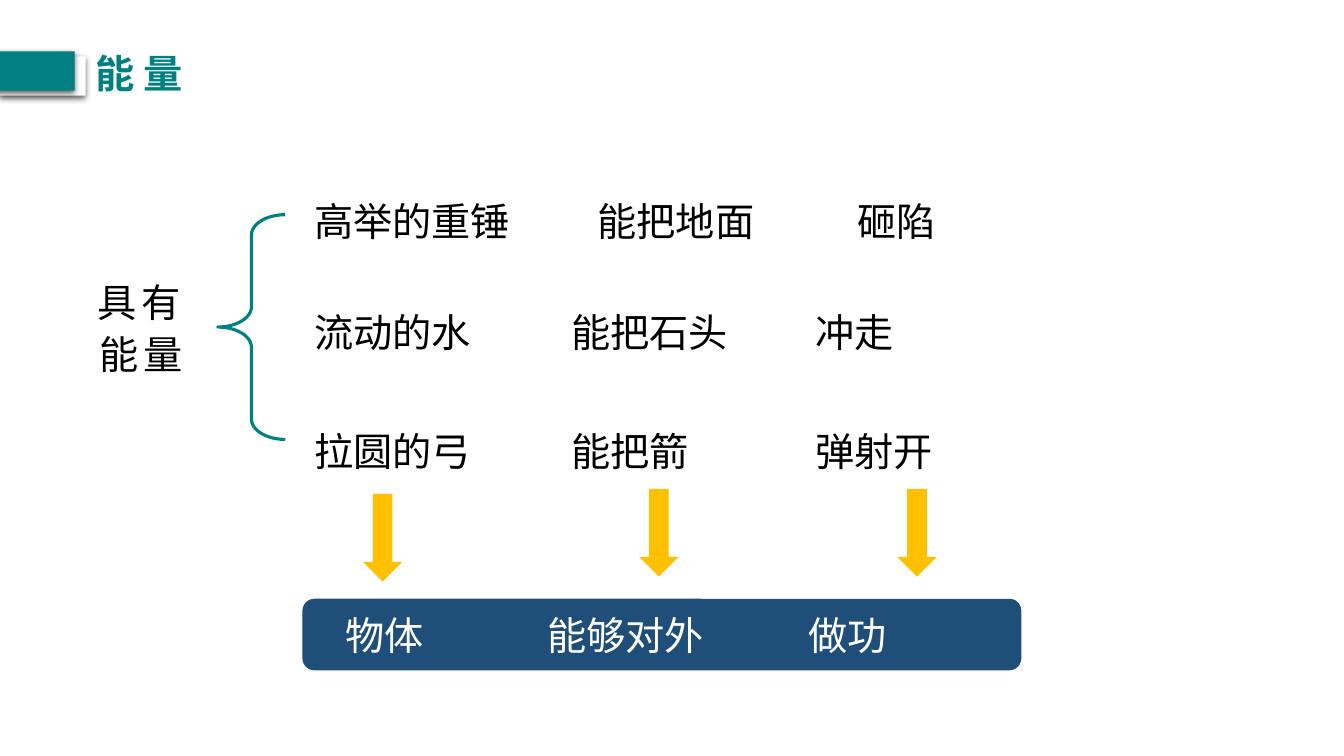
from lxml import etree
from pptx import Presentation
from pptx.dml.color import RGBColor
from pptx.enum.shapes import MSO_SHAPE
from pptx.enum.text import MSO_ANCHOR, MSO_AUTO_SIZE, PP_ALIGN
from pptx.oxml.ns import qn
from pptx.util import Inches, Pt

RECTANGLE = MSO_SHAPE.RECTANGLE
ROUNDED = MSO_SHAPE.ROUNDED_RECTANGLE
BRACE = MSO_SHAPE.RIGHT_BRACE
DOWN_ARROW = MSO_SHAPE.DOWN_ARROW
TOP = MSO_ANCHOR.TOP
NO_AUTOFIT = MSO_AUTO_SIZE.NONE
LEFT, CENTER = PP_ALIGN.LEFT, PP_ALIGN.CENTER

FONT = "Noto Sans CJK SC"
TEAL, NAVY, AMBER = "008080", "1F4E79", "FFC000"
BLACK, WHITE = "000000", "FFFFFF"

# Left, top, width, text parts and tab positions of each example
EXAMPLES = [
    (1.91, 9.97, ["高举的重锤", "能把地面", "砸陷"], [2.81, 5.39]),
    (3.01, 9.34, ["流动的水", "能把石头", "冲走"], [2.55, 4.97]),
    (4.19, 9.5, ["拉圆的弓", "能把箭", "弹射开"], [2.55, 4.97]),
]
ARROWS = [(3.6, 4.9), (6.34, 4.85), (8.9, 4.85)]


def color(hex_value):
    return RGBColor.from_string(hex_value)


def place(shape, left, top, width, height):
    shape.left, shape.top = Inches(left), Inches(top)
    shape.width, shape.height = Inches(width), Inches(height)


def add_tabs(paragraph, positions):
    tab_list = etree.SubElement(paragraph._p.get_or_add_pPr(), qn("a:tabLst"))
    for position in positions:
        etree.SubElement(tab_list, qn("a:tab"), pos=str(Inches(position)), algn="l")


def write(shape, text, text_color, align=LEFT, bold=False, tabs=()):
    frame = shape.text_frame
    frame.word_wrap = True
    frame.auto_size = NO_AUTOFIT
    frame.vertical_anchor = TOP
    paragraph = frame.paragraphs[0]
    paragraph.alignment = align
    if tabs:
        add_tabs(paragraph, tabs)
    run = paragraph.add_run()
    run.text = text
    run.font.size = Pt(28)
    run.font.bold = bold
    run.font.name = FONT
    run.font.color.rgb = color(text_color)
    etree.SubElement(run._r.get_or_add_rPr(), qn("a:ea"), typeface=FONT)
    return paragraph


def add_text(slide, box, text, text_color, **options):
    shape = slide.shapes.add_textbox(*map(Inches, box))
    return write(shape, text, text_color, **options)


def add_block(slide, kind, box, fill):
    shape = slide.shapes.add_shape(kind, *map(Inches, box))
    shape.shadow.inherit = False
    shape.fill.solid()
    shape.fill.fore_color.rgb = color(fill)
    shape.line.fill.background()
    return shape


def add_shadow(shape):
    effects = shape._element.spPr.find(qn("a:effectLst"))
    shadow = etree.SubElement(effects, qn("a:outerShdw"), blurRad=str(Pt(4.5)),
                              dist=str(Pt(1.5)), dir="5400000", algn="t",
                              rotWithShape="0")
    shade = etree.SubElement(shadow, qn("a:srgbClr"), val=BLACK)
    etree.SubElement(shade, qn("a:alpha"), val="63000")


def add_brace(slide, box):
    brace = slide.shapes.add_shape(BRACE, *map(Inches, box))
    brace.shadow.inherit = False
    brace.adjustments[0] = 0.3
    brace.adjustments[1] = 0.5
    brace.fill.background()
    brace.line.color.rgb = color(TEAL)
    brace.line.width = Pt(2.25)
    brace._element.spPr.find(qn("a:xfrm")).set("flipH", "1")


def add_heading(slide):
    for box, fill in [((0, 0.56, 0.85, 0.39), WHITE), ((-0.11, 0.51, 0.85, 0.39), TEAL)]:
        add_shadow(add_block(slide, RECTANGLE, box, fill))
    title = slide.shapes.title
    place(title, 0.85, 0.44, 3.74, 0.57)
    write(title, "能 量", TEAL, bold=True)


def main():
    presentation = Presentation()
    presentation.slide_width = Inches(13.33)
    presentation.slide_height = Inches(7.5)
    slide = presentation.slides.add_slide(presentation.slide_layouts[5])

    add_heading(slide)

    # Examples
    for top, width, parts, tabs in EXAMPLES:
        add_text(slide, (3.02, top, width, 0.57), "\t".join(parts), BLACK, tabs=tabs)

    # Shared property and its brace
    add_brace(slide, (2.16, 2.13, 0.67, 2.23))
    label = add_text(slide, (0.82, 2.67, 1.16, 1.14), "具有能量", BLACK, align=CENTER)
    label.line_spacing = 1.1
    label.runs[0]._r.get_or_add_rPr().set("spc", "300")

    # Conclusion
    for left, top in ARROWS:
        add_block(slide, DOWN_ARROW, (left, top, 0.39, 0.87), AMBER)
    add_block(slide, ROUNDED, (3, 5.94, 7.13, 0.71), NAVY)
    add_text(slide, (3.33, 6.02, 6.35, 0.57), "\t".join(["物体", "能够对外", "做功"]),
             WHITE, tabs=[2, 4.59])

    presentation.save("out.pptx")


if __name__ == "__main__":
    main()
